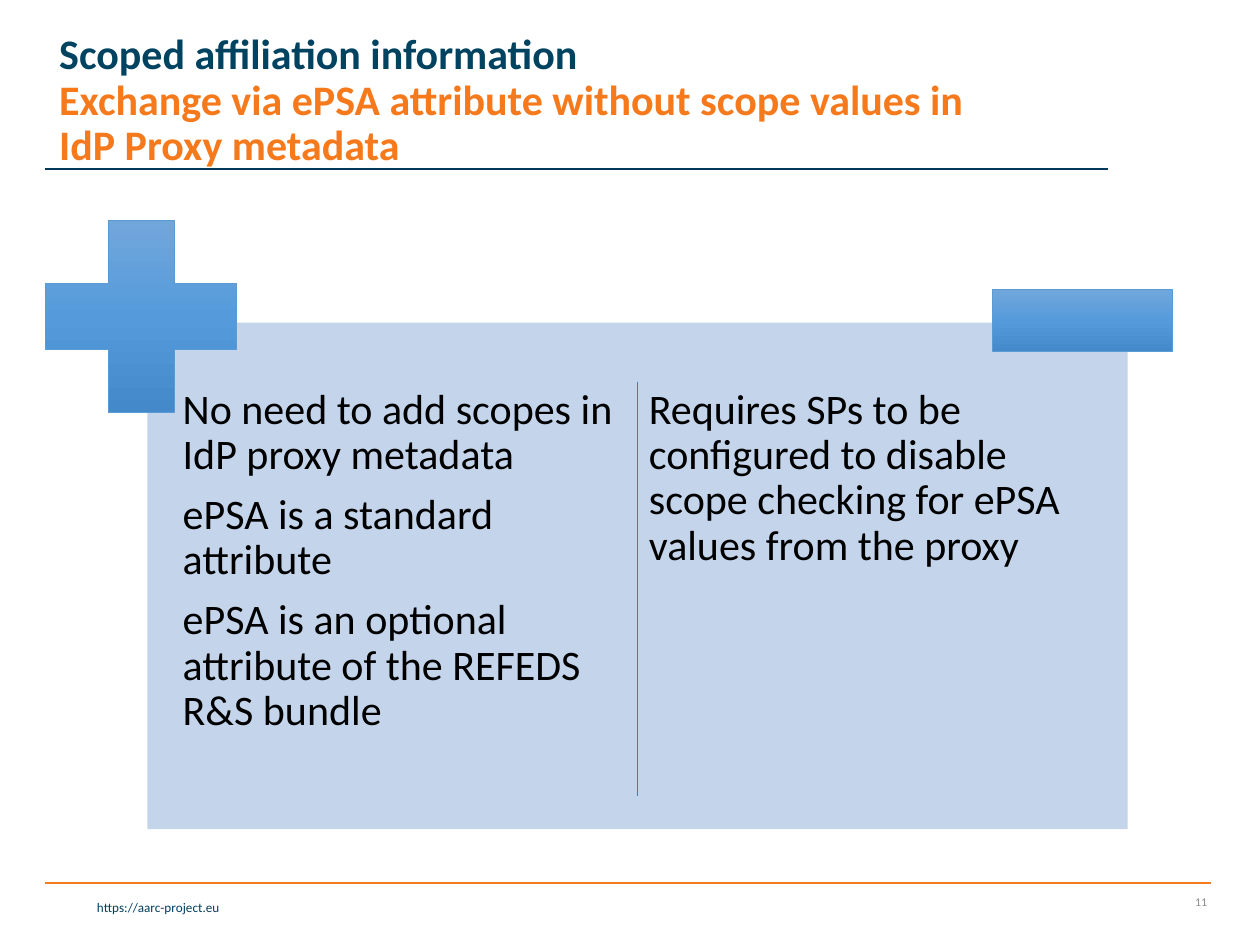
from dataclasses import dataclass

from lxml.etree import SubElement
from pptx import Presentation
from pptx.dml.color import RGBColor
from pptx.enum.shapes import MSO_CONNECTOR, MSO_SHAPE
from pptx.enum.text import MSO_ANCHOR, MSO_AUTO_SIZE, PP_ALIGN
from pptx.oxml import parse_xml
from pptx.oxml.ns import nsdecls, qn
from pptx.util import Inches, Pt

WIDTH, HEIGHT = Inches(10), Inches(7.5)
FONT = "Calibri"
NAVY, ORANGE, BLACK = "004361", "F6791C", "000000"
SIGN_STOPS = ((0, "71A6DB"), (50, "559BDB"), (100, "448ACA"))


@dataclass
class Box:
    """Left, top, width and height in percent of the slide's size."""
    x: float
    y: float
    w: float
    h: float

    def emu(self) -> tuple:
        return (round(WIDTH * self.x / 100), round(HEIGHT * self.y / 100),
                round(WIDTH * self.w / 100), round(HEIGHT * self.h / 100))


@dataclass
class Rule:
    """A straight line that spans its box."""
    box: Box
    color: str
    weight: float


@dataclass
class TextBlock:
    box: Box
    paragraphs: list
    size: float
    color: str
    align: PP_ALIGN = PP_ALIGN.LEFT
    anchor: MSO_ANCHOR = MSO_ANCHOR.TOP
    inset: tuple = (0.1, 0.05)
    line_spacing: float = 1.0
    space_after: float = 0


def rgb(color: str) -> RGBColor:
    return RGBColor.from_string(color)


def add_run(p, text: str, *, size: float, color: str, bold: bool = False) -> None:
    r = p.add_run()
    r.text = text
    r.font.name, r.font.size, r.font.bold = FONT, Pt(size), bold
    r.font.color.rgb = rgb(color)


def add_rule(s, rule: Rule) -> None:
    x, y, w, h = rule.box.emu()
    line = s.shapes.add_connector(MSO_CONNECTOR.STRAIGHT, x, y, x + w, y + h)
    line.line.color.rgb = rgb(rule.color)
    line.line.width = Pt(rule.weight)
    SubElement(line._element.spPr, qn("a:effectLst"))


def add_text(s, block: TextBlock) -> None:
    tf = s.shapes.add_textbox(*block.box.emu()).text_frame
    tf.word_wrap = True
    tf.vertical_anchor = block.anchor
    tf.margin_left = tf.margin_right = Inches(block.inset[0])
    tf.margin_top = tf.margin_bottom = Inches(block.inset[1])
    for i, text in enumerate(block.paragraphs):
        p = tf.add_paragraph() if i else tf.paragraphs[0]
        p.alignment = block.align
        p.line_spacing = block.line_spacing
        p.space_after = Pt(block.space_after)
        add_run(p, text, size=block.size, color=block.color)


def add_panel(s, box: Box, color: str) -> None:
    sp = s.shapes.add_shape(MSO_SHAPE.RECTANGLE, *box.emu())
    sp.shadow.inherit = False
    sp.fill.solid()
    sp.fill.fore_color.rgb = rgb(color)
    sp.line.fill.background()


def add_sign(s, kind: MSO_SHAPE, box: Box, *adjustments: float) -> None:
    """Plus or minus sign with a top-to-bottom gradient."""
    sp = s.shapes.add_shape(kind, *box.emu())
    sp.shadow.inherit = False
    for i, value in enumerate(adjustments):
        sp.adjustments[i] = value
    sp.line.color.rgb = rgb("5B9BD5")
    sp.line.width = Pt(0.5)
    stops = "".join(f'<a:gs pos="{pos * 1000}"><a:srgbClr val="{color}"/></a:gs>'
                    for pos, color in SIGN_STOPS)
    sp._element.spPr.find(qn("a:prstGeom")).addnext(parse_xml(
        f'<a:gradFill {nsdecls("a")} rotWithShape="1"><a:gsLst>{stops}</a:gsLst>'
        '<a:lin ang="5400000" scaled="0"/></a:gradFill>'))


def set_title(s, box: Box, heading: str, subheading: str) -> None:
    sp = s.shapes.title
    sp.left, sp.top, sp.width, sp.height = box.emu()
    tf = sp.text_frame
    tf.word_wrap = True
    tf.auto_size = MSO_AUTO_SIZE.NONE
    tf.vertical_anchor = MSO_ANCHOR.MIDDLE
    p = tf.paragraphs[0]
    p.alignment = PP_ALIGN.LEFT
    p.line_spacing = 0.9
    add_run(p, heading, size=24, color=NAVY, bold=True)
    p.add_line_break()
    add_run(p, subheading, size=24, color=ORANGE, bold=True)


def argument(x: float, paragraphs: list) -> TextBlock:
    return TextBlock(Box(x, 40.4, 36.1, 45.87), paragraphs, 24, BLACK,
                     inset=(0.05, 0.05), line_spacing=0.9, space_after=8.4)


def main() -> None:
    prs = Presentation()
    prs.slide_width, prs.slide_height = WIDTH, HEIGHT
    s = prs.slides.add_slide(prs.slide_layouts[5])

    set_title(s, Box(3.7, 1.07, 78.8, 19.33), "Scoped affiliation information",
              "Exchange via ePSA attribute without scope values in IdP Proxy metadata")
    add_panel(s, Box(11.7, 34.13, 77.8, 53.6), "C4D5EB")

    for block in (
        TextBlock(Box(3.5, 94.53, 14.9, 3.07), ["https://aarc-project.eu"],
                  7.5, "003F5E", PP_ALIGN.RIGHT),
        TextBlock(Box(90.7, 93.47, 6.1, 4), ["11"],
                  6.8, "8C8C8C", PP_ALIGN.RIGHT, MSO_ANCHOR.MIDDLE),
        argument(14, ["No need to add scopes in IdP proxy metadata",
                      "ePSA is a standard attribute",
                      "ePSA is an optional attribute of the REFEDS R&S bundle"]),
        argument(51, ["Requires SPs to be configured to disable scope checking "
                      "for ePSA values from the proxy"]),
    ):
        add_text(s, block)

    add_sign(s, MSO_SHAPE.CROSS, Box(3.6, 23.33, 15.2, 20.27), 0.328)
    add_sign(s, MSO_SHAPE.RECTANGLE, Box(78.8, 30.67, 14.3, 6.53))

    for rule in (
        Rule(Box(3.6, 17.87, 84.3, 0), "003959", 1),
        Rule(Box(50.6, 40.4, 0, 43.87), "497CAB", 0.5),
        Rule(Box(3.6, 93.47, 92.5, 0), "F57B20", 1),
    ):
        add_rule(s, rule)

    prs.save("out.pptx")


if __name__ == "__main__":
    main()
